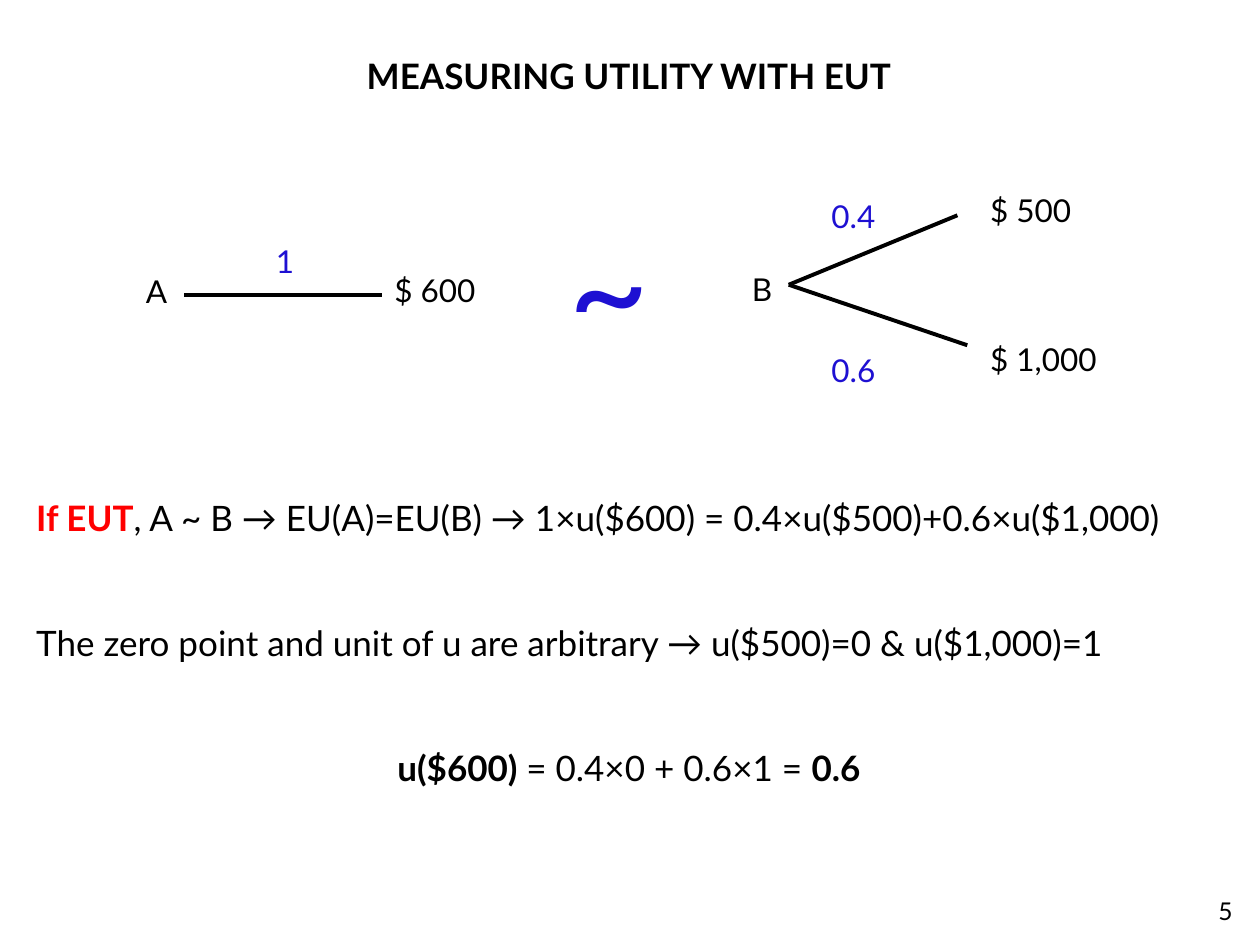
from lxml import etree
from pptx import Presentation
from pptx.dml.color import RGBColor
from pptx.enum.shapes import MSO_CONNECTOR
from pptx.enum.text import MSO_ANCHOR, PP_ALIGN
from pptx.oxml.ns import qn
from pptx.util import Cm, Pt

LEFT, MID, RIGHT = PP_ALIGN.LEFT, PP_ALIGN.CENTER, PP_ALIGN.RIGHT
STRAIGHT = MSO_CONNECTOR.STRAIGHT
CENTRE = MSO_ANCHOR.MIDDLE
BLACK, BLUE, RED = "000000", "1E10D2", "FF0000"


def style(run, size, hue=BLACK, bold=False):
    font = run.font
    font.name = "Lato"
    font.size = Pt(size)
    font.bold = bold
    font.color.rgb = RGBColor.from_string(hue)


deck = Presentation()
deck.slide_width, deck.slide_height = Cm(25.4), Cm(19.05)
slide = deck.slides.add_slide(deck.slide_layouts[5])
shapes = slide.shapes

title = shapes.title
title.left, title.top, title.width, title.height = Cm(0.48), Cm(0.92), Cm(24.4), Cm(1.2)
title.text_frame.text = "MEASURING UTILITY WITH EUT"
title.text_frame.vertical_anchor = CENTRE
head = title.text_frame.paragraphs[0]
head.alignment = MID
style(head.runs[0], 20, bold=True)

lines = [
    (3.71, 5.94, 7.7, 5.94),
    (15.9, 5.74, 19.3, 4.34),
    (15.9, 5.74, 19.5, 6.96),
]
for ends in lines:
    line = shapes.add_connector(STRAIGHT, *[Cm(end) for end in ends])
    line.line.width = Pt(2.25)
    line.line.color.rgb = RGBColor.from_string(BLACK)
    etree.SubElement(line._element.spPr, qn("a:effectLst"))

labels = [
    ("A", 2.69, 5.36, 1.2, 1.02, 18, BLACK, LEFT),
    ("1", 5.31, 4.75, 1.07, 1.02, 18, BLUE, LEFT),
    ("$ 600", 7.7, 5.33, 2.4, 1.02, 18, BLACK, LEFT),
    ("~", 10.69, 3.94, 3.2, 3.68, 80, BLUE, MID),
    ("B", 14.91, 5.31, 1.2, 1.02, 18, BLACK, LEFT),
    ("0.4", 16.51, 3.84, 1.6, 1.02, 18, BLUE, LEFT),
    ("0.6", 16.51, 6.96, 1.6, 1.02, 18, BLUE, LEFT),
    ("$ 500", 19.71, 3.73, 2.2, 1.02, 18, BLACK, LEFT),
    ("$ 1,000", 19.71, 6.73, 2.8, 1.02, 18, BLACK, LEFT),
    ("5", 19.18, 17.93, 5.92, 0.74, 14, BLACK, RIGHT),
]
for text, x, y, wide, high, size, hue, align in labels:
    box = shapes.add_textbox(Cm(x), Cm(y), Cm(wide), Cm(high))
    box.text_frame.word_wrap = True
    box.text_frame.text = text
    para = box.text_frame.paragraphs[0]
    para.alignment = align
    style(para.runs[0], size, hue)

proof = [
    (LEFT, [("If EUT", RED, True),
            (", A ~ B → EU(A)=EU(B) → 1×u($600) = 0.4×u($500)+0.6×u($1,000)", BLACK, False)]),
    (LEFT, [("The zero point and unit of u are arbitrary → u($500)=0 & u($1,000)=1", BLACK, False)]),
    (MID, [("u($600) ", BLACK, True),
           ("= 0.4×0 + 0.6×1 = ", BLACK, False),
           ("0.6", BLACK, True)]),
]
body = shapes.add_textbox(Cm(0.48), Cm(9.88), Cm(24.4), Cm(6.2)).text_frame
body.word_wrap = True
for step, (align, parts) in enumerate(proof):
    para = body.add_paragraph() if step else body.paragraphs[0]
    para.alignment = align
    para.space_before = Pt(47.6 if step else 0)
    for text, hue, bold in parts:
        run = para.add_run()
        run.text = text
        style(run, 20, hue, bold)

deck.save("out.pptx")
